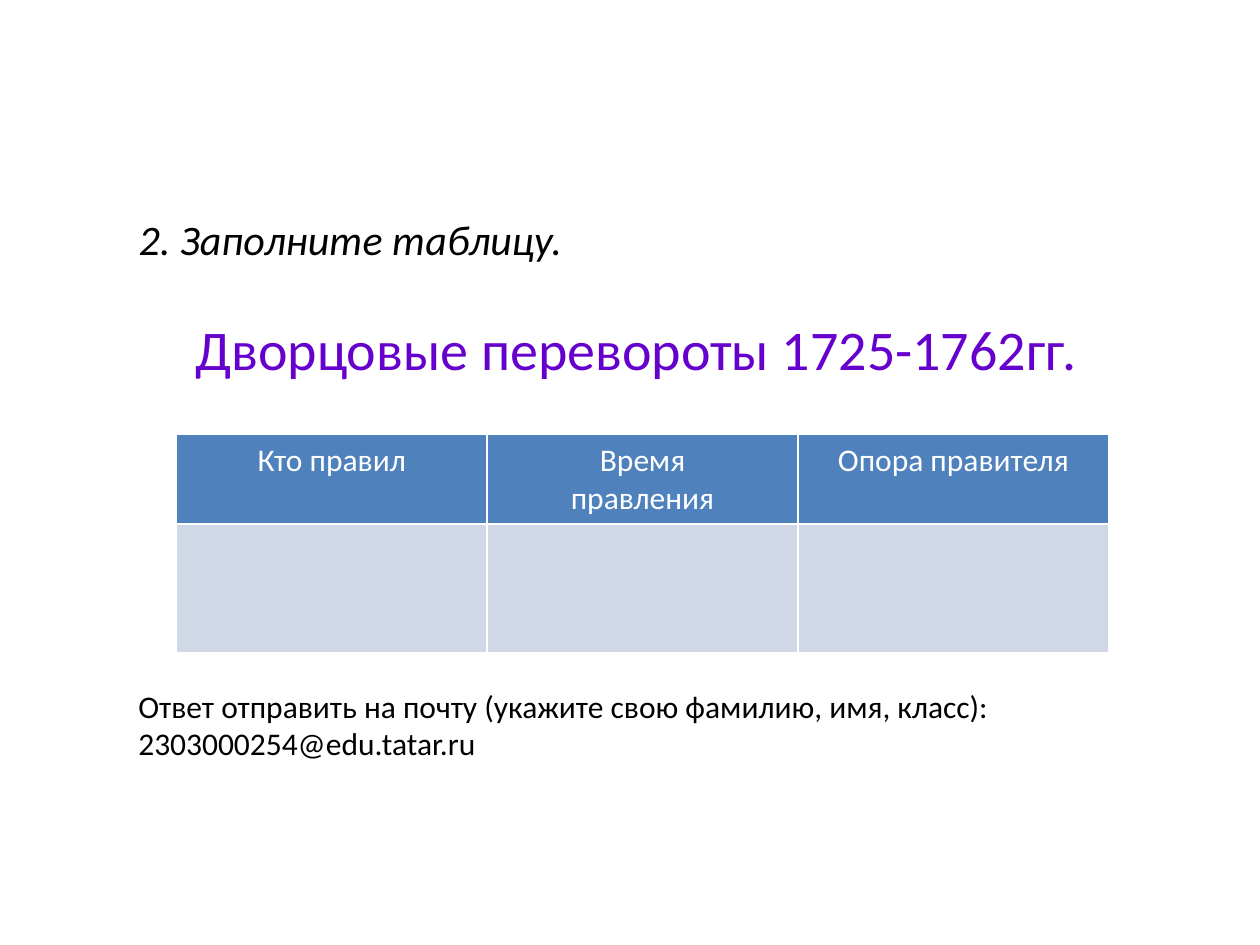
from dataclasses import dataclass

from lxml import etree
from pptx import Presentation
from pptx.dml.color import RGBColor
from pptx.enum.text import MSO_ANCHOR, PP_ALIGN
from pptx.oxml.ns import qn
from pptx.util import Inches, Pt

LEFT, CENTER = PP_ALIGN.LEFT, PP_ALIGN.CENTER
MIDDLE = MSO_ANCHOR.MIDDLE
TITLE_ONLY = 5
SLIDE_W, SLIDE_H = Inches(10), Inches(7.5)


@dataclass(frozen=True)
class Theme:
    font: str = "Calibri"
    ink: str = "000000"
    accent: str = "6600CC"
    header_fill: str = "4F81BD"
    body_fill: str = "D0D8E8"
    white: str = "FFFFFF"
    task_size: int = 24
    topic_size: int = 32
    text_size: int = 18
    border: float = 1


THEME = Theme()
HEADERS = ["Кто правил", "Время\nправления", "Опора правителя"]
ROW_SHARES = [0.41, 0.59]


def share_box(left, top, width, height):
    """Turn shares of the slide's size into lengths."""
    return (int(SLIDE_W * left), int(SLIDE_H * top),
            int(SLIDE_W * width), int(SLIDE_H * height))


def place(shape, box):
    shape.left, shape.top, shape.width, shape.height = box


def style_paragraph(paragraph, size, color, align=LEFT, italic=False):
    paragraph.alignment = align
    for run in paragraph.runs:
        font = run.font
        font.name, font.size = THEME.font, Pt(size)
        font.bold, font.italic = False, italic
        font.color.rgb = RGBColor.from_string(color)


def fill_title(title, box):
    place(title, box)
    frame = title.text_frame
    frame.text = "2. Заполните таблицу.\nДворцовые перевороты 1725-1762гг."
    frame.vertical_anchor = MIDDLE
    task, topic = frame.paragraphs
    style_paragraph(task, THEME.task_size, THEME.ink, italic=True)
    style_paragraph(topic, THEME.topic_size, THEME.accent)
    topic.space_before = Pt(29)
    indent = topic._p.get_or_add_pPr()
    indent.set("marL", str(Inches(0.45)))
    indent.set("indent", "0")


def set_borders(cell):
    properties = cell._tc.get_or_add_tcPr()
    for position, side in enumerate(("lnL", "lnR", "lnT", "lnB")):
        line = etree.Element(qn(f"a:{side}"), w=str(Pt(THEME.border)))
        solid = etree.SubElement(line, qn("a:solidFill"))
        etree.SubElement(solid, qn("a:srgbClr"), val=THEME.white)
        properties.insert(position, line)


def add_rulers_table(slide, box):
    table = slide.shapes.add_table(len(ROW_SHARES), len(HEADERS), *box).table
    width, height = box[2:]
    for column in table.columns:
        column.width = width // len(HEADERS)
    for row, share, color in zip(table.rows, ROW_SHARES,
                                 (THEME.header_fill, THEME.body_fill)):
        row.height = int(height * share)
        for cell in row.cells:
            cell.fill.solid()
            cell.fill.fore_color.rgb = RGBColor.from_string(color)
            set_borders(cell)
    for cell, header in zip(table.rows[0].cells, HEADERS):
        cell.text_frame.text = header
        for paragraph in cell.text_frame.paragraphs:
            style_paragraph(paragraph, THEME.text_size, THEME.white, CENTER)


def add_answer_note(slide, box):
    frame = slide.shapes.add_textbox(*box).text_frame
    frame.word_wrap = True
    frame.text = ("Ответ отправить на почту (укажите свою фамилию, имя, класс): "
                  "2303000254@edu.tatar.ru")
    style_paragraph(frame.paragraphs[0], THEME.text_size, THEME.ink)


def main():
    deck = Presentation()
    deck.slide_width, deck.slide_height = SLIDE_W, SLIDE_H
    slide = deck.slides.add_slide(deck.slide_layouts[TITLE_ONLY])
    fill_title(slide.shapes.title, share_box(0.1, 0.15, 0.83, 0.33))
    add_rulers_table(slide, share_box(0.14, 0.46, 0.74, 0.23))
    add_answer_note(slide, share_box(0.1, 0.72, 0.79, 0.09))
    deck.save("out.pptx")


if __name__ == "__main__":
    main()
